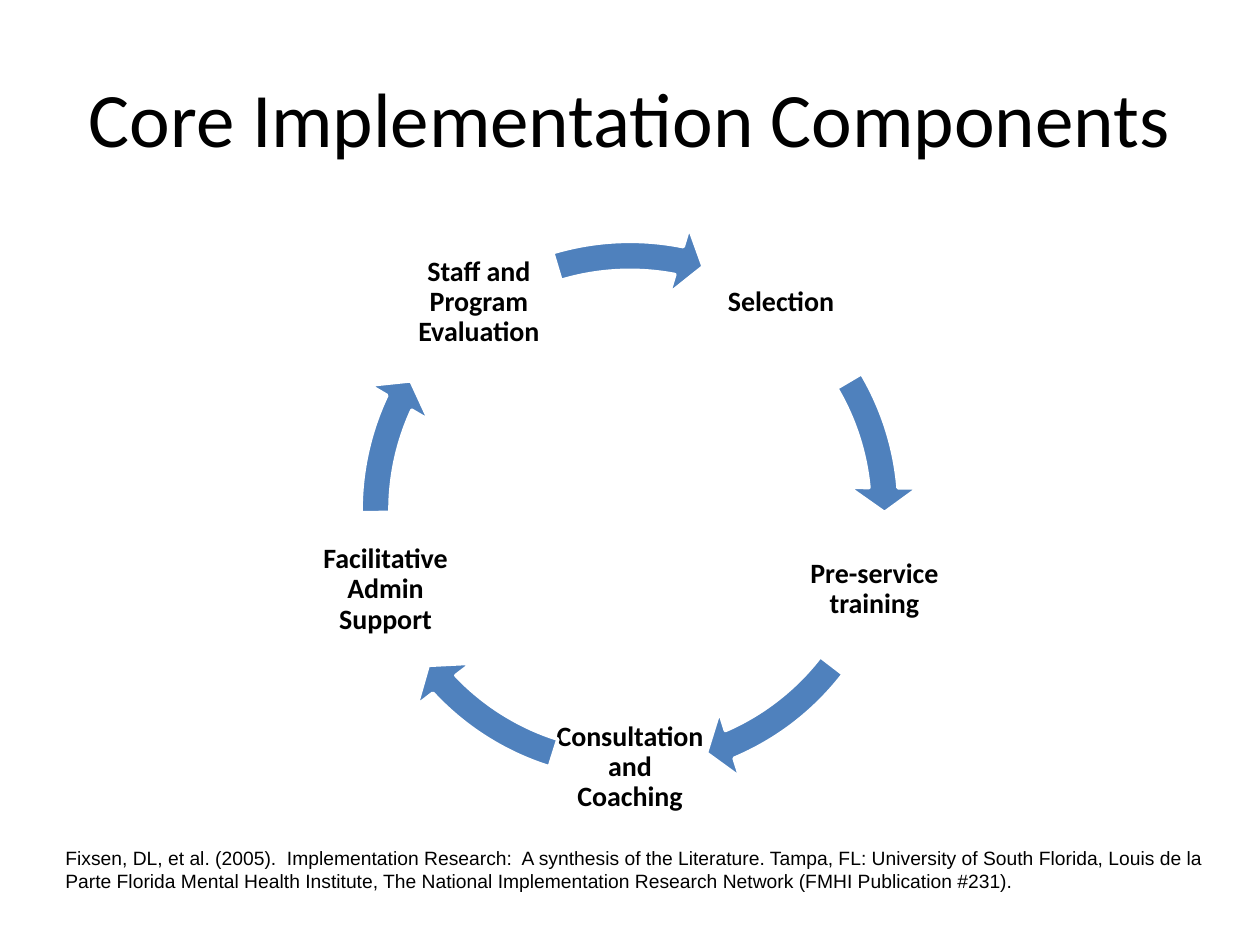
from math import cos, radians, sin

from pptx import Presentation
from pptx.dml.color import RGBColor
from pptx.enum.shapes import MSO_SHAPE
from pptx.enum.text import MSO_ANCHOR, MSO_AUTO_SIZE, PP_ALIGN
from pptx.util import Inches, Pt

CIRCULAR_ARROW = MSO_SHAPE.CIRCULAR_ARROW
MIDDLE = MSO_ANCHOR.MIDDLE
CENTER = PP_ALIGN.CENTER
LEFT = PP_ALIGN.LEFT
GROW = MSO_AUTO_SIZE.SHAPE_TO_FIT_TEXT

TITLE = "Core Implementation Components"
# Component, then the start and end angle in degrees of the arrow drawn with it
COMPONENTS = [
    ("Selection", 329.43, 354.9),
    ("Pre-service training", 37.55, 66.93),
    ("Consultation and Coaching", 107.48, 136.86),
    ("Facilitative Admin Support", 179.5, 204.98),
    ("Staff and Program Evaluation", 253.3, 281.11),
]
CITATION = (
    "Fixsen, DL, et al. (2005).  Implementation Research:  A synthesis of the "
    "Literature. Tampa, FL: University of South Florida, Louis de la Parte Florida "
    "Mental Health Institute, The National Implementation Research Network "
    "(FMHI Publication #231)."
)

THEME = {
    "text": RGBColor(0x00, 0x00, 0x00),
    "arrow": RGBColor(0x4F, 0x81, 0xBD),
    "outline": RGBColor(0xFF, 0xFF, 0xFF),
    "font": "Calibri",
    "citation_font": "Arial",
    "title_size": 44,
    "label_size": 16,
    "citation_size": 11,
}

CENTER_X, CENTER_Y = 5, 4.05
RING_RADIUS = 2.04
FIRST_ANGLE = -54
LABEL_SIZE = 1.22
LABEL_INSET = 0.02
ARROW_SIZE = 4.59
ARROW_THICKNESS, HEAD_ANGLE, HEAD_WIDTH = 0.05, 5.6, 0.06
ADJUSTMENT_PER_DEGREE = 0.6


def write(frame, text, font, size, align, bold=False):
    para = frame.paragraphs[0]
    para.alignment = align
    span = para.add_run()
    span.text = text
    span.font.name = font
    span.font.size = Pt(size)
    span.font.bold = bold
    span.font.color.rgb = THEME["text"]
    return para


def square_at(x, y, size):
    """Left, top, width and height of a square centred on x, y."""
    return [Inches(v) for v in (x - size / 2, y - size / 2, size, size)]


def add_title(slide):
    title = slide.shapes.title
    title.left, title.top = Inches(0.5), Inches(0.3)
    title.width, title.height = Inches(9), Inches(1.25)
    title.text_frame.vertical_anchor = MIDDLE
    write(title.text_frame, TITLE, THEME["font"], THEME["title_size"], CENTER)


def add_label(shapes, text, angle):
    x = CENTER_X + RING_RADIUS * cos(radians(angle))
    y = CENTER_Y + RING_RADIUS * sin(radians(angle))
    frame = shapes.add_textbox(*square_at(x, y, LABEL_SIZE)).text_frame
    frame.word_wrap = True
    frame.vertical_anchor = MIDDLE
    frame.margin_left = frame.margin_right = Inches(LABEL_INSET)
    frame.margin_top = frame.margin_bottom = Inches(LABEL_INSET)
    para = write(frame, text, THEME["font"], THEME["label_size"], CENTER, bold=True)
    para.line_spacing = 0.9


def add_arrow(shapes, start, end):
    arrow = shapes.add_shape(CIRCULAR_ARROW, *square_at(CENTER_X, CENTER_Y, ARROW_SIZE))
    arrow.shadow.inherit = False
    arrow.fill.solid()
    arrow.fill.fore_color.rgb = THEME["arrow"]
    arrow.line.color.rgb = THEME["outline"]
    arrow.line.width = Pt(2)
    angles = [degrees * ADJUSTMENT_PER_DEGREE for degrees in (HEAD_ANGLE, end, start)]
    for index, value in enumerate([ARROW_THICKNESS, *angles, HEAD_WIDTH]):
        arrow.adjustments[index] = value


def add_cycle(slide):
    cycle = slide.shapes.add_group_shape()
    step = 360 / len(COMPONENTS)
    for index, (text, start, end) in enumerate(COMPONENTS):
        add_label(cycle.shapes, text, FIRST_ANGLE + index * step)
        add_arrow(cycle.shapes, start, end)


def add_citation(slide):
    box = slide.shapes.add_textbox(Inches(0.42), Inches(6.67), Inches(9.25), Inches(0.47))
    box.text_frame.word_wrap = True
    box.text_frame.auto_size = GROW
    write(box.text_frame, CITATION, THEME["citation_font"], THEME["citation_size"], LEFT)


def main():
    deck = Presentation()
    deck.slide_width, deck.slide_height = Inches(10), Inches(7.5)
    slide = deck.slides.add_slide(deck.slide_layouts[5])
    add_title(slide)
    add_cycle(slide)
    add_citation(slide)
    deck.save("out.pptx")


if __name__ == "__main__":
    main()
